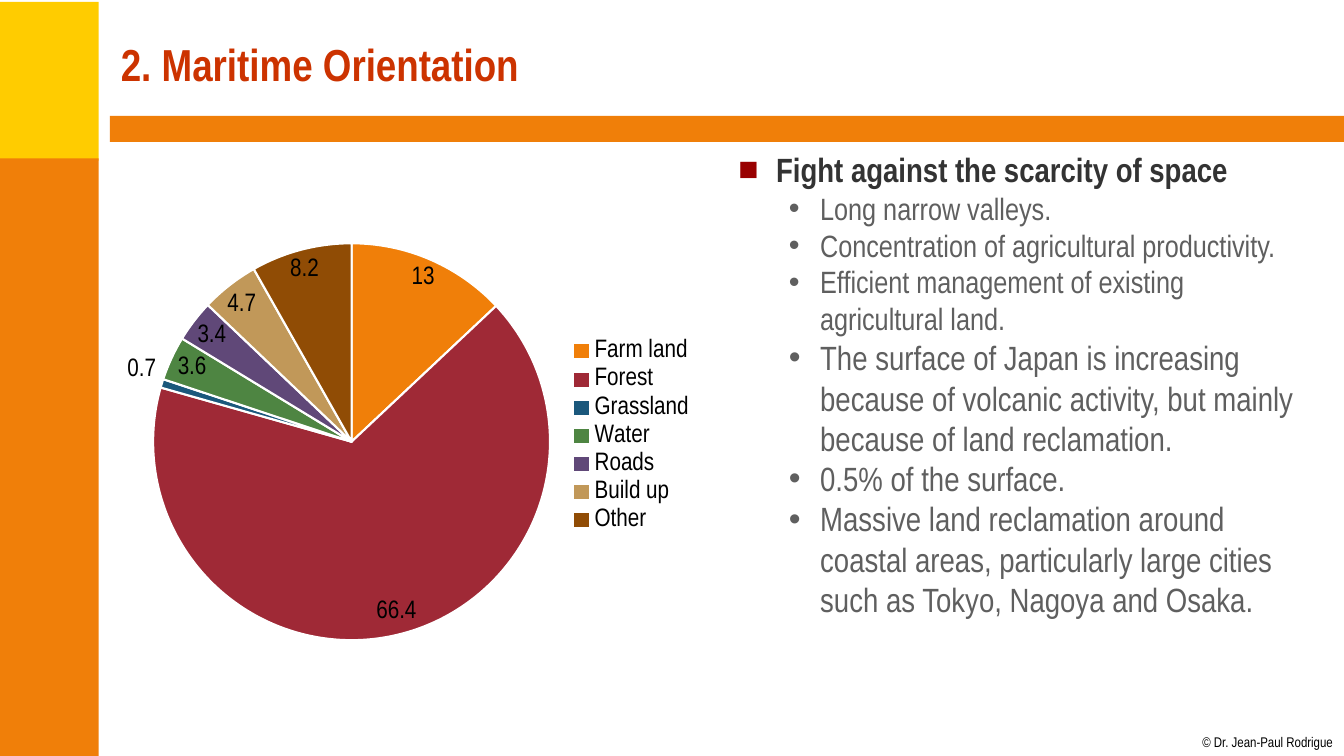
import pptx
import pptx.chart.data
import pptx.dml.color
import pptx.enum.chart
import pptx.enum.shapes
import pptx.enum.text
import pptx.oxml
import pptx.oxml.ns
import pptx.util
from pptx.util import Cm

RGBColor = pptx.dml.color.RGBColor
YELLOW = RGBColor(0xFF, 0xCC, 0x00)
ORANGE = RGBColor(0xF0, 0x7F, 0x09)
TITLE_RED = RGBColor(0xCC, 0x33, 0x00)
BULLET_RED = RGBColor(0x99, 0x00, 0x00)
HEADING_GREY = RGBColor(0x33, 0x33, 0x33)
TEXT_GREY = RGBColor(0x5F, 0x5F, 0x5F)
BLACK = RGBColor(0, 0, 0)
WHITE = RGBColor(0xFF, 0xFF, 0xFF)
FONT = "Arial Narrow"

LAND_USE = [
    ("Farm land", 13, ORANGE),
    ("Forest", 66.4, RGBColor(0x9F, 0x29, 0x36)),
    ("Grassland", 0.7, RGBColor(0x1B, 0x58, 0x7C)),
    ("Water", 3.6, RGBColor(0x4E, 0x85, 0x42)),
    ("Roads", 3.4, RGBColor(0x60, 0x48, 0x78)),
    ("Build up", 4.7, RGBColor(0xC1, 0x98, 0x59)),
    ("Other", 8.2, RGBColor(0x90, 0x4C, 0x05)),
]
HEADING = "Fight against the scarcity of space"
POINTS = [
    ("Long narrow valleys.", 22),
    ("Concentration of agricultural productivity.", 22),
    ("Efficient management of existing agricultural land.", 22),
    ("The surface of Japan is increasing because of volcanic activity, "
     "but mainly because of land reclamation.", 24),
    ("0.5% of the surface.", 24),
    ("Massive land reclamation around coastal areas, particularly large "
     "cities such as Tokyo, Nagoya and Osaka.", 24),
]


def style_font(font, size, color, bold=False):
    """Set the typeface, size, colour and weight of a font."""
    font.name = FONT
    font.size = pptx.util.Pt(size)
    font.bold = bold
    font.color.rgb = color


def add_band(slide, left, top, width, height, color):
    """Add a plain coloured rectangle."""
    band = slide.shapes.add_shape(
        pptx.enum.shapes.MSO_SHAPE.RECTANGLE, left, top, width, height)
    band.shadow.inherit = False
    band.fill.solid()
    band.fill.fore_color.rgb = color
    band.line.fill.background()


def set_title(slide, text):
    """Place and format the title placeholder."""
    title = slide.shapes.title
    title.left, title.top = Cm(2.79), Cm(0.28)
    title.width, title.height = Cm(30.48), Cm(2.64)
    frame = title.text_frame
    frame.text = text
    frame.vertical_anchor = pptx.enum.text.MSO_ANCHOR.MIDDLE
    para = frame.paragraphs[0]
    para.alignment = pptx.enum.text.PP_ALIGN.LEFT
    style_font(para.runs[0].font, 32, TITLE_RED, True)


def set_plot_layout(chart, **fractions):
    """Fix the inner plot area as fractions of the chart frame."""
    plot_area = chart._chartSpace.chart.plotArea
    for layout in plot_area.findall(pptx.oxml.ns.qn("c:layout")):
        plot_area.remove(layout)
    sizes = "".join(f'<c:{key} val="{value}"/>' for key, value in fractions.items())
    plot_area.insert(0, pptx.oxml.parse_xml(
        f'<c:layout {pptx.oxml.ns.nsdecls("c")}><c:manualLayout>'
        '<c:layoutTarget val="inner"/><c:xMode val="edge"/><c:yMode val="edge"/>'
        f'{sizes}</c:manualLayout></c:layout>'))


def add_land_use_pie(slide):
    """Add the pie chart of land use with its legend and values."""
    data = pptx.chart.data.CategoryChartData()
    data.categories = [name for name, _, _ in LAND_USE]
    data.add_series("Series 1", [value for _, value, _ in LAND_USE])
    chart = slide.shapes.add_chart(
        pptx.enum.chart.XL_CHART_TYPE.PIE,
        Cm(2.79), Cm(3.63), Cm(14.99), Cm(14.71), data).chart
    style_font(chart.font, 18, BLACK)
    chart.has_title = False
    chart.has_legend = True
    chart.legend.position = pptx.enum.chart.XL_LEGEND_POSITION.RIGHT
    chart.legend.include_in_layout = False
    style_font(chart.legend.font, 18, BLACK)
    set_plot_layout(chart, x=0.07, y=0.17, w=0.67, h=0.68)
    plot = chart.plots[0]
    plot.vary_by_categories = True
    plot.has_data_labels = True
    labels = plot.data_labels
    labels.show_value = True
    labels.show_percentage = False
    labels.position = pptx.enum.chart.XL_LABEL_POSITION.BEST_FIT
    style_font(labels.font, 18, BLACK)
    for index, (_, _, color) in enumerate(LAND_USE):
        slice_format = plot.series[0].points[index].format
        slice_format.fill.solid()
        slice_format.fill.fore_color.rgb = color
        slice_format.line.color.rgb = WHITE
        slice_format.line.width = pptx.util.Pt(1.5)


def set_bullet(para, symbol, margin, hanging, color):
    """Give a paragraph a bullet and a hanging indent."""
    properties = para._p.get_or_add_pPr()
    properties.set("marL", str(margin))
    properties.set("indent", str(-hanging))
    namespace = pptx.oxml.ns.nsdecls("a")
    properties.append(pptx.oxml.parse_xml(
        f'<a:buClr {namespace}><a:srgbClr val="{color}"/></a:buClr>'))
    properties.append(pptx.oxml.parse_xml(
        f'<a:buFont {namespace} typeface="Arial"/>'))
    properties.append(pptx.oxml.parse_xml(
        f'<a:buChar {namespace} char="{symbol}"/>'))


def add_points(slide):
    """Add the heading and its bulleted points."""
    box = slide.shapes.add_textbox(Cm(18.36), Cm(3.63), Cm(14.99), Cm(14.71))
    frame = box.text_frame
    frame.word_wrap = True
    frame.text = HEADING
    heading = frame.paragraphs[0]
    set_bullet(heading, "■", Cm(0.95), Cm(0.95), BULLET_RED)
    style_font(heading.runs[0].font, 24, HEADING_GREY, True)
    for text, size in POINTS:
        para = frame.add_paragraph()
        para.text = text
        para.level = 1
        set_bullet(para, "•", Cm(2.06), Cm(0.79), TEXT_GREY)
        style_font(para.runs[0].font, size, TEXT_GREY)


def add_copyright(slide, text):
    """Add the small copyright line at the bottom right."""
    box = slide.shapes.add_textbox(Cm(30.3), Cm(18.49), Cm(3.33), Cm(0.43))
    frame = box.text_frame
    frame.margin_left = frame.margin_right = 0
    frame.margin_top = frame.margin_bottom = 0
    frame.word_wrap = False
    frame.text = text
    style_font(frame.paragraphs[0].runs[0].font, 10, BLACK)


def main():
    """Build the slide and save the deck."""
    deck = pptx.Presentation()
    deck.slide_width, deck.slide_height = Cm(33.87), Cm(19.05)
    slide = deck.slides.add_slide(deck.slide_layouts[5])
    add_band(slide, Cm(-0.05), Cm(0.05), Cm(2.54), Cm(4), YELLOW)
    add_band(slide, Cm(-0.05), Cm(3.99), Cm(2.54), Cm(15.06), ORANGE)
    add_band(slide, Cm(2.77), Cm(2.92), Cm(31.1), Cm(0.66), ORANGE)
    add_copyright(slide, "© Dr. Jean-Paul Rodrigue")
    set_title(slide, "2. Maritime Orientation")
    add_land_use_pie(slide)
    add_points(slide)
    deck.save("out.pptx")


if __name__ == "__main__":
    main()
